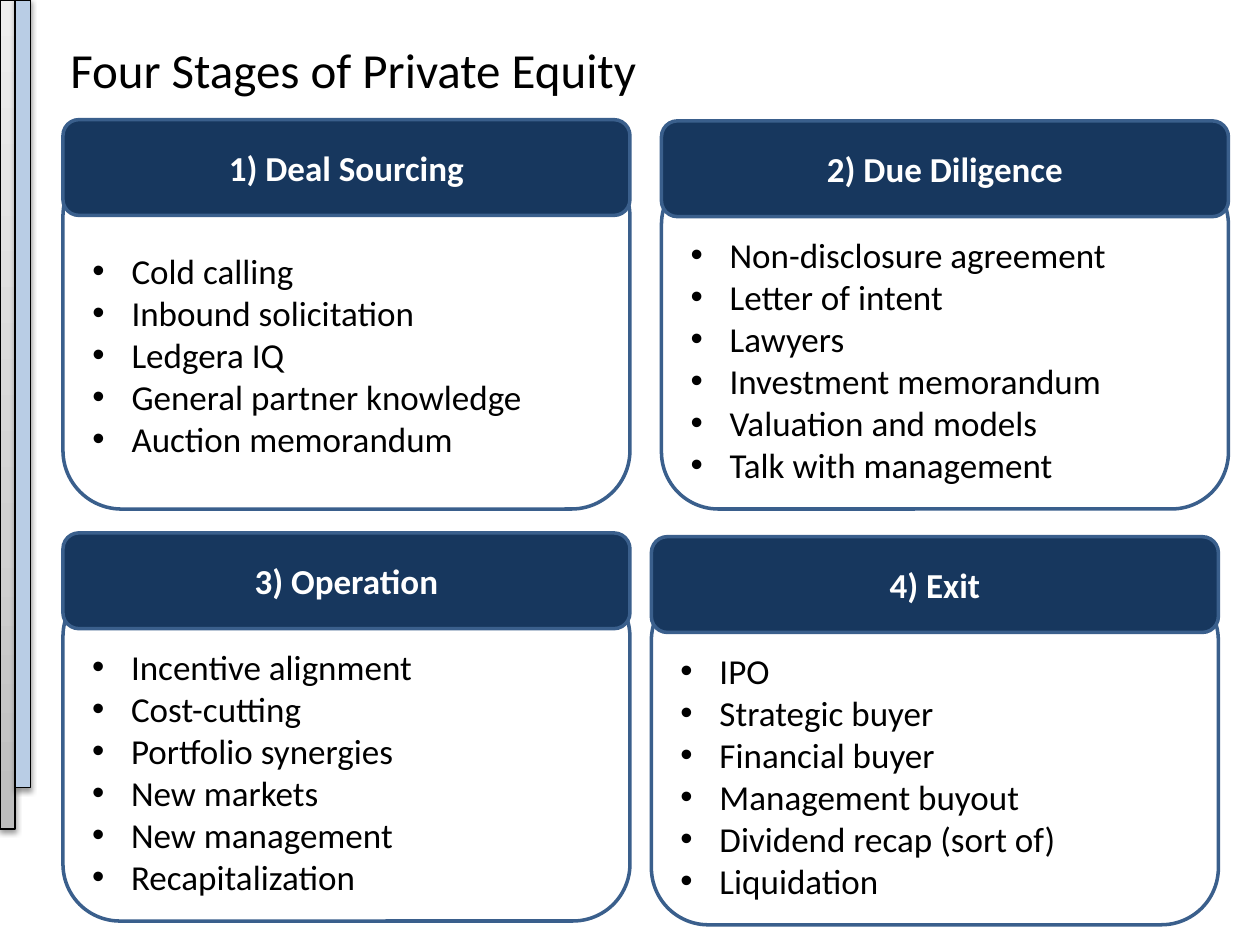
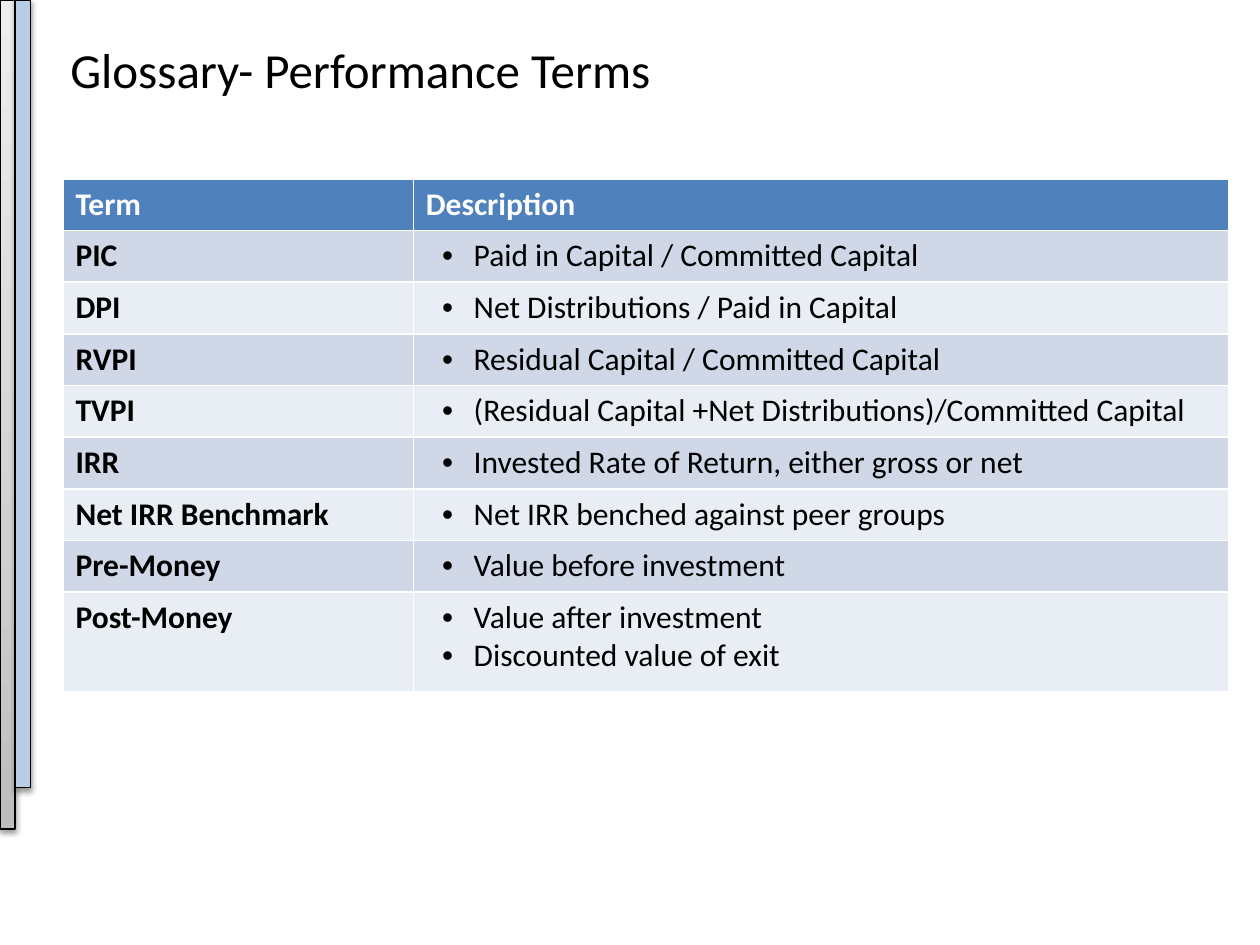
from copy import deepcopy

from lxml.etree import SubElement
from pptx import Presentation
from pptx.dml.color import RGBColor
from pptx.enum.shapes import MSO_SHAPE as Shape
from pptx.enum.text import MSO_ANCHOR as Anchor, PP_ALIGN as Align
from pptx.oxml.ns import qn
from pptx.util import Inches, Pt

FONT = "Calibri"
BLACK = RGBColor(0x00, 0x00, 0x00)
WHITE = RGBColor(0xFF, 0xFF, 0xFF)
NAVY = RGBColor(0x17, 0x37, 0x5E)
OUTLINE = RGBColor(0x3A, 0x5F, 0x8C)
PALE_BLUE = RGBColor(0xB9, 0xCD, 0xE5)
HEADER_BLUE = RGBColor(0x4F, 0x81, 0xBD)
ROW_TINTS = (RGBColor(0xD0, 0xD8, 0xE8), RGBColor(0xE9, 0xED, 0xF4))
GREYS = (
    (0, RGBColor(0xBD, 0xBD, 0xBD)),
    (0.35, RGBColor(0xD1, 0xD1, 0xD1)),
    (1, RGBColor(0xEE, 0xEE, 0xEE)),
)

STAGES = [
    ("1) Deal Sourcing", 0.5, 0.95, 1.25, 2.79,
     ["Cold calling", "Inbound solicitation", "Ledgera IQ",
      "General partner knowledge", "Auction memorandum"]),
    ("2) Due Diligence", 5.25, 0.96, 1.33, 2.71,
     ["Non-disclosure agreement", "Letter of intent", "Lawyers",
      "Investment memorandum", "Valuation and models", "Talk with management"]),
    ("3) Operation", 0.5, 4.23, 4.6, 2.71,
     ["Incentive alignment", "Cost-cutting", "Portfolio synergies",
      "New markets", "New management", "Recapitalization"]),
    ("4) Exit", 5.17, 4.26, 4.63, 2.71,
     ["IPO", "Strategic buyer", "Financial buyer", "Management buyout",
      "Dividend recap (sort of)", "Liquidation"]),
]

GLOSSARY = [
    ("PIC", ["Paid in Capital / Committed Capital"]),
    ("DPI", ["Net Distributions / Paid in Capital"]),
    ("RVPI", ["Residual Capital / Committed Capital"]),
    ("TVPI", ["(Residual Capital +Net Distributions)/Committed Capital"]),
    ("IRR", ["Invested Rate of Return, either gross or net"]),
    ("Net IRR Benchmark", ["Net IRR benched against peer groups"]),
    ("Pre-Money", ["Value before investment"]),
    ("Post-Money", ["Value after investment", "Discounted value of exit"]),
]


def write_lines(frame, lines, size, color=BLACK, bold=False, align=Align.LEFT, bullet=None):
    for index, line in enumerate(lines):
        paragraph = frame.add_paragraph() if index else frame.paragraphs[0]
        paragraph.alignment = align
        if bullet:
            margin, hanging = bullet
            props = paragraph._p.get_or_add_pPr()
            props.set("marL", str(Inches(margin)))
            props.set("indent", str(-Inches(hanging)))
            SubElement(props, qn("a:buFont"), typeface="Arial")
            SubElement(props, qn("a:buChar"), char="•")
        run = paragraph.add_run()
        run.text = line
        run.font.name = FONT
        run.font.size = Pt(size)
        run.font.bold = bold
        run.font.color.rgb = color


def add_block(slide, kind, box, fill, line, width):
    block = slide.shapes.add_shape(kind, *map(Inches, box))
    block.shadow.inherit = False
    block.fill.solid()
    block.fill.fore_color.rgb = fill
    block.line.color.rgb = line
    block.line.width = Pt(width)
    block.text_frame.word_wrap = True
    block.text_frame.vertical_anchor = Anchor.MIDDLE
    return block


deck = Presentation()
deck.slide_width = Inches(10)
deck.slide_height = Inches(7.5)

slides = []
for heading in ("Four Stages of Private Equity", "Glossary- Performance Terms"):
    slide = deck.slides.add_slide(deck.slide_layouts[6])
    slides.append(slide)

    grey_band = add_block(slide, Shape.RECTANGLE, (0, 0, 0.12, 6.58), WHITE, BLACK, 0.75)
    blue_band = add_block(slide, Shape.RECTANGLE, (0.12, 0, 0.12, 6.25), PALE_BLUE, BLACK, 0.75)

    grey_band.fill.gradient()
    grey_band.fill.gradient_angle = 90
    stop_list = grey_band._element.spPr.find(".//" + qn("a:gsLst"))
    stop_list.insert(1, deepcopy(stop_list[0]))
    for stop, (position, grey) in zip(grey_band.fill.gradient_stops, GREYS):
        stop.position = position
        stop.color.rgb = grey

    for band in (grey_band, blue_band):
        effects = band._element.spPr.find(qn("a:effectLst"))
        shadow = SubElement(effects, qn("a:outerShdw"), blurRad=str(Pt(3.1)),
                            dist=str(Pt(1.6)), dir="5400000", rotWithShape="0")
        tone = SubElement(shadow, qn("a:srgbClr"), val=str(BLACK))
        SubElement(tone, qn("a:alpha"), val="38000")

    title = slide.shapes.add_textbox(Inches(0.46), Inches(0.17), Inches(7.21), Inches(0.75))
    title.text_frame.word_wrap = True
    title.text_frame.vertical_anchor = Anchor.MIDDLE
    write_lines(title.text_frame, [heading], 28)

stages_slide, glossary_slide = slides

for stage, left, header_top, body_top, body_height, steps in STAGES:
    body = add_block(stages_slide, Shape.ROUNDED_RECTANGLE,
                     (left, body_top, 4.5, body_height), WHITE, OUTLINE, 2)
    body.text_frame.margin_top = Inches(0.39)
    write_lines(body.text_frame, steps, 20, bullet=(0.31, 0.31))
    header = add_block(stages_slide, Shape.ROUNDED_RECTANGLE,
                       (left, header_top, 4.5, 0.76), NAVY, OUTLINE, 2)
    write_lines(header.text_frame, [stage], 20, WHITE, True, Align.CENTER)

terms = glossary_slide.shapes.add_table(
    len(GLOSSARY) + 1, 2, Inches(0.5), Inches(1.42), Inches(9.25), Inches(4.04)).table
for column, width in zip(terms.columns, (2.78, 6.47)):
    column.width = Inches(width)
for row in terms.rows:
    row.height = Inches(0.41)
terms.rows[len(GLOSSARY)].height = Inches(0.79)

for cell, label in zip(terms.rows[0].cells, ("Term", "Description")):
    cell.fill.solid()
    cell.fill.fore_color.rgb = HEADER_BLUE
    write_lines(cell.text_frame, [label], 18, WHITE, True)

for index, (term, meanings) in enumerate(GLOSSARY):
    term_cell, meaning_cell = terms.rows[index + 1].cells
    for cell in (term_cell, meaning_cell):
        cell.fill.solid()
        cell.fill.fore_color.rgb = ROW_TINTS[index % 2]
    write_lines(term_cell.text_frame, [term], 18, bold=True)
    write_lines(meaning_cell.text_frame, meanings, 18, bullet=(0.38, 0.25))

deck.save("out.pptx")
